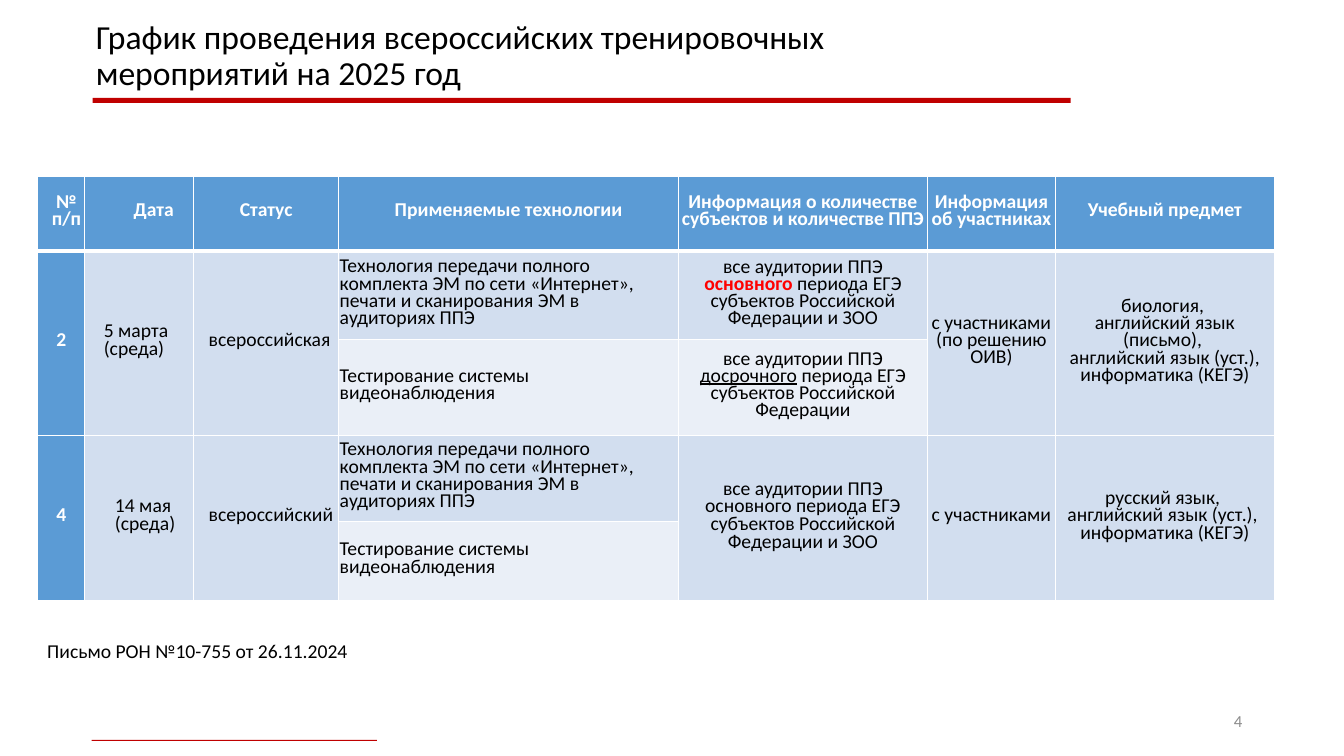
from copy import deepcopy

from lxml.etree import SubElement
from pptx import Presentation
from pptx.dml.color import RGBColor
from pptx.enum.shapes import MSO_SHAPE
from pptx.enum.text import MSO_ANCHOR, MSO_AUTO_SIZE, PP_ALIGN
from pptx.oxml.ns import qn
from pptx.util import Pt

PX = 9144
COLORS = {
    "white": "FFFFFF", "black": "000000", "rule": "C00000", "accent": "FF0000",
    "head": "5B9BD5", "band": "D2DEEF", "light": "EAEFF7", "number": "8C8C8C",
}
CENTER, RIGHT, LEFT = PP_ALIGN.CENTER, PP_ALIGN.RIGHT, PP_ALIGN.LEFT


def rgb(name):
    """Look up a colour by name."""
    return RGBColor.from_string(COLORS[name])


def write(tf, text, size=14, color="black", bold=False, align=LEFT,
          spacing=None, indent=0, mark="", mark_format=None):
    """Fill a frame: list items are paragraphs, newlines are line breaks."""
    paragraphs = [text] if isinstance(text, str) else text
    for i, content in enumerate(paragraphs):
        p = tf.paragraphs[0] if i == 0 else tf.add_paragraph()
        p.alignment = align
        if spacing:
            p.line_spacing = spacing
        if indent:
            p._p.get_or_add_pPr().set("marL", str(indent * PX))
        for part in content.partition(mark) if mark else [content]:
            fmt = {"color": color, "bold": bold, "underline": None}
            if mark and part == mark:
                fmt.update(mark_format)
            for j, line in enumerate(part.split("\n")):
                if j:
                    p.add_line_break()
                r = p.add_run()
                r.text = line
                r.font.name = "Calibri"
                r.font.size = Pt(size)
                r.font.bold = fmt["bold"]
                r.font.underline = fmt["underline"]
                r.font.color.rgb = rgb(fmt["color"])
        for br in p._p.findall(qn("a:br")):
            br.append(deepcopy(r._r.rPr))


class Deck:
    """Holds the presentation and its current slide."""

    def __init__(self, width, height):
        """Start a deck with one title-only slide."""
        self.prs = Presentation()
        self.prs.slide_width, self.prs.slide_height = width * PX, height * PX
        self.s = self.prs.slides.add_slide(self.prs.slide_layouts[5])

    def title(self, box, text, **fmt):
        """Place and format the title."""
        sp = self.s.shapes.title
        sp.left, sp.top, sp.width, sp.height = [v * PX for v in box]
        tf = sp.text_frame
        tf.auto_size = MSO_AUTO_SIZE.NONE
        tf.vertical_anchor = MSO_ANCHOR.MIDDLE
        write(tf, text, **fmt)

    def bar(self, box, color):
        """Draw a plain filled bar."""
        sp = self.s.shapes.add_shape(MSO_SHAPE.RECTANGLE, *[v * PX for v in box])
        sp.shadow.inherit = False
        sp.fill.solid()
        sp.fill.fore_color.rgb = rgb(color)
        sp.line.fill.background()

    def text(self, box, text, anchor=MSO_ANCHOR.TOP, wrap=True, **fmt):
        """Add a text box."""
        tf = self.s.shapes.add_textbox(*[v * PX for v in box]).text_frame
        tf.word_wrap = wrap
        tf.auto_size = MSO_AUTO_SIZE.NONE if wrap else MSO_AUTO_SIZE.SHAPE_TO_FIT_TEXT
        tf.vertical_anchor = anchor
        write(tf, text, **fmt)

    def borders(self, cell, **widths):
        """Set white cell borders in points, keyed by side."""
        tcPr = cell._tc.get_or_add_tcPr()
        for side in "LRTB":
            ln = SubElement(tcPr, qn(f"a:ln{side}"), w=str(Pt(widths.get(side, 1))))
            fill = SubElement(ln, qn("a:solidFill"))
            SubElement(fill, qn("a:srgbClr"), val=COLORS["white"])

    def table(self, left, top, cols, rows, cells):
        """Add a table; a cell that is None belongs to the one above it."""
        tbl = self.s.shapes.add_table(len(rows), len(cols), left * PX, top * PX,
                                      sum(cols) * PX, sum(rows) * PX).table
        for column, width in zip(tbl.columns, cols):
            column.width = width * PX
        for row, height in zip(tbl.rows, rows):
            row.height = height * PX
        for i, line in enumerate(cells):
            for j, entry in enumerate(line):
                cell = tbl.cell(i, j)
                self.borders(cell, T=3 if i == 1 else 1, B=3 if i == 0 else 1)
                fill = "head" if i == 0 or j == 0 else "band"
                if j in (3, 4) and i in (2, 4):
                    fill = "light"
                cell.fill.solid()
                cell.fill.fore_color.rgb = rgb(fill)
                if entry is None:
                    tbl.cell(i - 1, j).merge(cell)
                    continue
                cell.margin_left = cell.margin_right = PX
                cell.margin_top = cell.margin_bottom = 0
                cell.vertical_anchor = MSO_ANCHOR.MIDDLE
                text, points, fmt = entry
                style = {"align": CENTER if i == 0 or j > 3 else LEFT}
                if fill == "head":
                    style.update(color="white", bold=True)
                write(cell.text_frame, text, spacing=Pt(points), **{**style, **fmt})


def entry(text, points=12.2, **fmt):
    """Describe one table cell."""
    return text, points, fmt


def main():
    """Build the slide and save it."""
    deck = Deck(1333, 750)
    deck.bar((92, 97, 970, 5), "rule")
    deck.bar((91, 734, 283, 1), "rule")
    deck.title((85, 25, 1179, 62),
               "График проведения всероссийских тренировочных\nмероприятий на 2025 год",
               size=24, spacing=0.9)

    transfer = entry("Технология передачи полного комплекта ЭМ по сети «Интернет», "
                     "печати и сканирования ЭМ в аудиториях ППЭ", 12.4)
    video = "Тестирование системы видеонаблюдения"
    main_period = ("все аудитории ППЭ основного периода ЕГЭ субъектов Российской "
                   "Федерации и ЗОО")
    cells = [
        [entry(["№", "п/п"], 11.9, indent=11),
         entry("Дата", 11.6, indent=29),
         entry("Статус", 11.6),
         entry("Применяемые технологии", 11.6),
         entry("Информация о количестве субъектов и количестве ППЭ", 12.4),
         entry("Информация об участниках", 12.4),
         entry("Учебный предмет", 11.6)],
        [entry("2", indent=18),
         entry("5 марта (среда)", 12.6, indent=18),
         entry("всероссийская", indent=14),
         transfer,
         entry(main_period, 12.1, mark="основного ",
               mark_format={"color": "accent", "bold": True}),
         entry(["с участниками", "(по решению ОИВ)"]),
         entry("биология, \nанглийский язык (письмо), \n"
               "английский язык (уст.), информатика (КЕГЭ)", 12.4)],
        [None, None, None,
         entry(video, 12.4),
         entry("все аудитории ППЭ досрочного периода ЕГЭ субъектов Российской Федерации",
               mark="досрочного", mark_format={"underline": True}),
         None, None],
        [entry("4", indent=18),
         entry("14 мая (среда)", 12.6, indent=29),
         entry("всероссийский", indent=14),
         transfer,
         entry(main_period, 12.6),
         entry("с участниками"),
         entry("русский язык, \nанглийский язык (уст.), \nинформатика (КЕГЭ)", 12.6)],
        [None, None, None, entry(video, 12.8), None, None, None],
    ]
    deck.table(37, 175, [47, 108, 144, 337, 247, 127, 217], [74, 88, 95, 85, 79], cells)

    deck.text((942, 695, 300, 40), "4", anchor=MSO_ANCHOR.MIDDLE, size=12,
              color="number", align=RIGHT)
    deck.text((37, 629, 351, 34), "Письмо РОН №10-755 от 26.11.2024", wrap=False)
    deck.prs.save("out.pptx")


if __name__ == "__main__":
    main()
